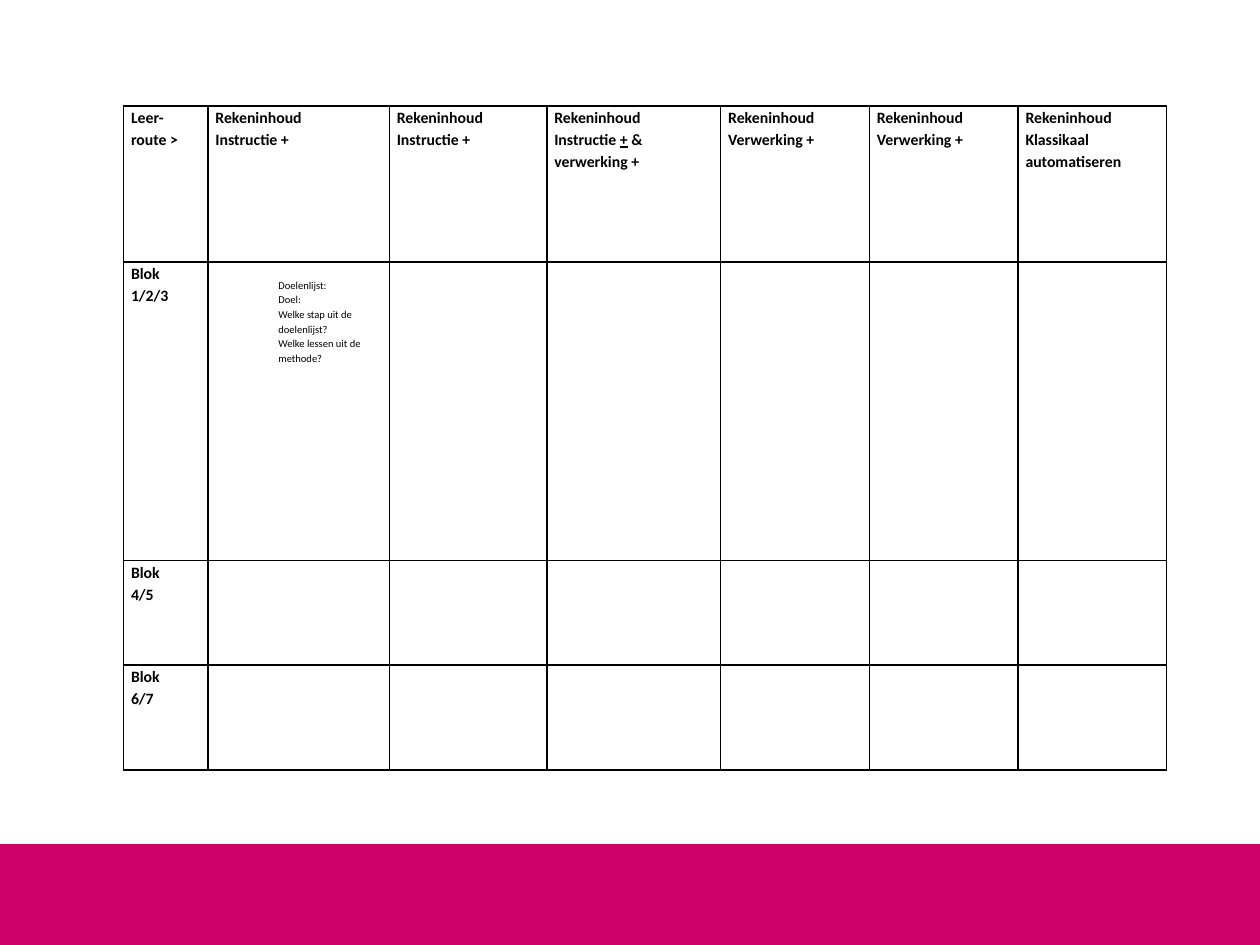
"""Build a slide with a planning grid of arithmetic content per learning route."""
from lxml import etree
from pptx import Presentation
from pptx import util as u
from pptx.dml.color import RGBColor
from pptx.enum import shapes
from pptx.oxml import ns

THEME = {
    "font": "Calibri",
    "ink": "000000",
    "band": "CC0066",
    "label": {"size": u.Pt(9), "bold": True},
    "note": {"size": u.Pt(6), "bold": False},
    "border": u.Pt(1),
    "spacing": 1.15,
}
SLIDE = (10, 7.5)
BAND_TOP = 6.7
ORIGIN = (0.98, 0.84)
COLS = [0.67, 1.44, 1.25, 1.38] + [1.18] * 3
ROWS = [1.24, 2.37, 0.83, 0.83]
INSET = 0.06
NOTE_INDENT = 0.5
NOTE_TOP = 0.12

TOPIC = "Rekeninhoud"
HEADER = [
    ["Leer-", "route >"],
    [TOPIC, "Instructie +"],
    [TOPIC, "Instructie +"],
    [TOPIC, ("Instructie ", "+", " & verwerking +")],
    [TOPIC, "Verwerking +"],
    [TOPIC, "Verwerking +"],
    [TOPIC, "Klassikaal", "automatiseren"],
]
BLOCKS = [["Blok 1/2/3"], ["Blok", "4/5"], ["Blok", "6/7"]]
NOTE = ["Doelenlijst:", "Doel:", "Welke stap uit de doelenlijst?",
        "Welke lessen uit de", "methode?"]


def set_all(obj, values):
    for name, value in values.items():
        setattr(obj, name, value)


def write(cell, lines, style, indent=0):
    tf = cell.text_frame
    for i, line in enumerate(lines):
        p = tf.paragraphs[0] if i == 0 else tf.add_paragraph()
        p.line_spacing = THEME["spacing"]
        if indent:
            p._p.get_or_add_pPr().set("marL", str(u.Inches(indent)))
        parts = (line,) if isinstance(line, str) else line
        for j, part in enumerate(parts):
            r = p.add_run()
            r.text = part
            set_all(r.font, {"name": THEME["font"], "underline": j == 1, **style})
            r.font.color.rgb = RGBColor.from_string(THEME["ink"])


def style_cell(cell):
    set_all(cell, {"margin_left": u.Inches(INSET), "margin_right": u.Inches(INSET),
                   "margin_top": 0, "margin_bottom": 0})
    tc_pr = cell._tc.get_or_add_tcPr()
    for side in "LRTB":
        ln = etree.SubElement(tc_pr, ns.qn(f"a:ln{side}"), w=str(THEME["border"]))
        fill = etree.SubElement(ln, ns.qn("a:solidFill"))
        etree.SubElement(fill, ns.qn("a:srgbClr"), val=THEME["ink"])
    cell.fill.background()


def add_band(s):
    sp = s.shapes.add_shape(shapes.MSO_SHAPE.RECTANGLE, 0, u.Inches(BAND_TOP),
                            u.Inches(SLIDE[0]), u.Inches(SLIDE[1] - BAND_TOP))
    sp.shadow.inherit = False
    sp.fill.solid()
    sp.fill.fore_color.rgb = RGBColor.from_string(THEME["band"])
    sp.line.fill.background()


def add_grid(s):
    box = [u.Inches(v) for v in (*ORIGIN, sum(COLS), sum(ROWS))]
    table = s.shapes.add_table(len(ROWS), len(COLS), *box).table
    for col, width in zip(table.columns, COLS):
        col.width = u.Inches(width)
    for row, height in zip(table.rows, ROWS):
        row.height = u.Inches(height)
    for cell in table.iter_cells():
        style_cell(cell)
    for c, lines in enumerate(HEADER):
        write(table.cell(0, c), lines, THEME["label"])
    for r, lines in enumerate(BLOCKS, 1):
        write(table.cell(r, 0), lines, THEME["label"])
    note = table.cell(1, 1)
    note.margin_top = u.Inches(NOTE_TOP)
    write(note, NOTE, THEME["note"], NOTE_INDENT)


def main():
    prs = Presentation()
    prs.slide_width, prs.slide_height = (u.Inches(v) for v in SLIDE)
    s = prs.slides.add_slide(prs.slide_layouts[6])
    add_band(s)
    add_grid(s)
    prs.save("out.pptx")


if __name__ == "__main__":
    main()
